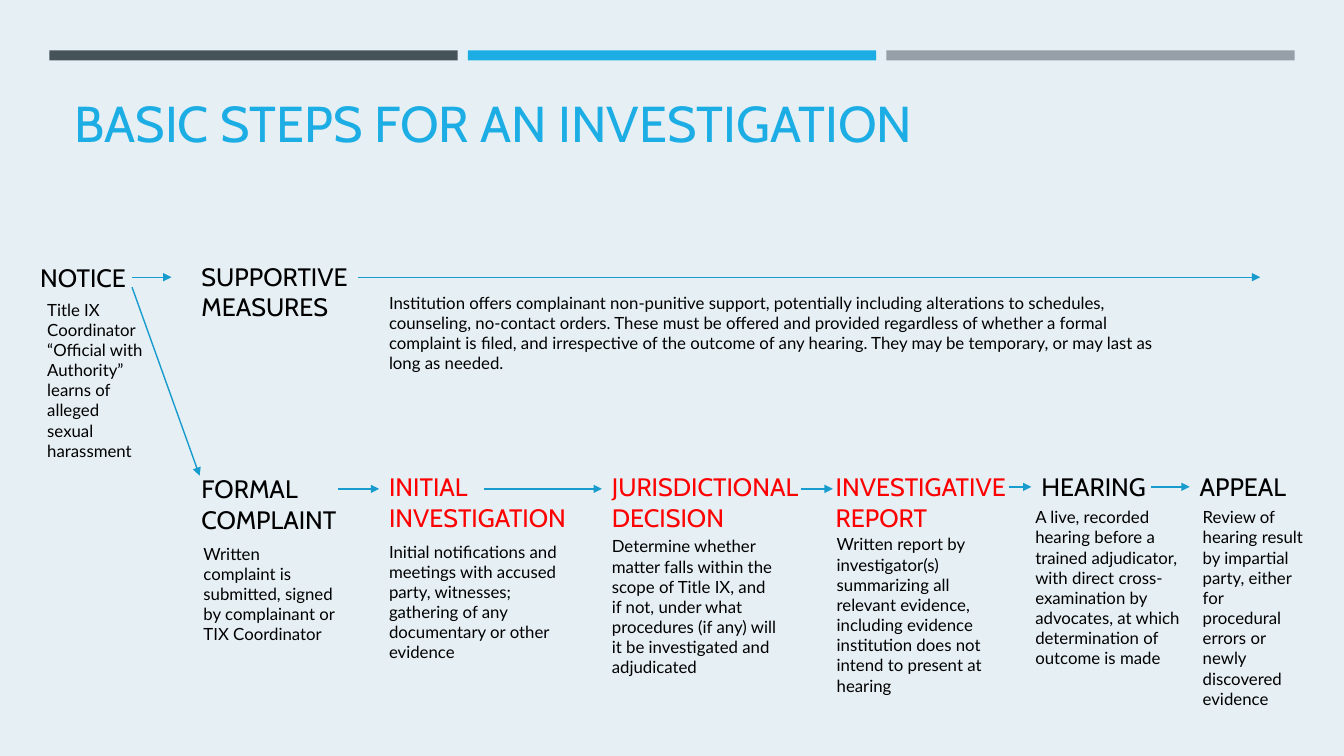
from typing import NamedTuple

from lxml.etree import SubElement
from pptx import Presentation
from pptx.dml.color import RGBColor
from pptx.enum.shapes import MSO_CONNECTOR, MSO_SHAPE
from pptx.enum.text import MSO_ANCHOR, MSO_AUTO_SIZE, PP_ALIGN
from pptx.oxml.ns import qn
from pptx.util import Inches, Pt

COLORS = {
    "background": "E6EFF4",
    "slate": "465359",
    "blue": "1CADE4",
    "gray": "969FA7",
    "arrow": "189CCE",
    "black": "000000",
    "red": "FF0000",
}


class Box(NamedTuple):
    x: float
    y: float
    w: float
    h: float


class Step(NamedTuple):
    heading: str
    heading_box: Box
    body: str
    body_box: Box
    color: str = "black"


class Arrow(NamedTuple):
    x1: float
    y1: float
    x2: float
    y2: float


TITLE_BOX = Box(0.64, 0.63, 11.68, 1.3)

STEPS = [
    Step("NOTICE", Box(0.3, 2.55, 1.4, 0.41),
         "Title IX Coordinator “Official with Authority” learns of alleged "
         "sexual harassment",
         Box(0.37, 2.92, 1.19, 1.72)),
    Step("SUPPORTIVE MEASURES", Box(1.9, 2.54, 1.72, 0.71),
         "Institution offers complainant non-punitive support, potentially "
         "including alterations to schedules, counseling, no-contact orders. "
         "These must be offered and provided regardless of whether a formal "
         "complaint is filed, and irrespective of the outcome of any hearing. "
         "They may be temporary, or may last as long as needed.",
         Box(3.76, 2.85, 7.99, 0.91)),
    Step("FORMAL COMPLAINT", Box(1.9, 4.65, 1.72, 0.71),
         "Written complaint is submitted, signed by complainant or TIX "
         "Coordinator",
         Box(1.92, 5.34, 1.5, 1.11)),
    Step("INITIAL INVESTIGATION", Box(3.76, 4.63, 2.08, 0.71),
         "Initial notifications and meetings with accused party, witnesses; "
         "gathering of any documentary or other evidence",
         Box(3.76, 5.32, 1.92, 1.31), "red"),
    Step("JURISDICTIONAL\nDECISION", Box(5.97, 4.63, 2.08, 0.71),
         "Determine whether matter falls within the scope of Title IX, and if "
         "not, under what procedures (if any) will it be investigated and "
         "adjudicated",
         Box(5.97, 5.27, 1.85, 1.51), "red"),
    Step("INVESTIGATIVE REPORT", Box(8.19, 4.63, 1.92, 0.71),
         "Written report by investigator(s) summarizing all relevant evidence, "
         "including evidence institution does not intend to present at hearing",
         Box(8.2, 5.25, 1.8, 1.72), "red"),
    Step("HEARING", Box(10.23, 4.63, 1.4, 0.4),
         "A live, recorded hearing before a trained adjudicator, with direct "
         "cross-examination by advocates, at which determination of outcome is "
         "made",
         Box(10.17, 4.98, 1.63, 1.72)),
    Step("APPEAL", Box(11.8, 4.63, 1.4, 0.4),
         "Review of hearing result by impartial party, either for procedural "
         "errors or newly discovered evidence",
         Box(11.83, 4.98, 1.21, 1.92)),
]

ARROWS = [
    Arrow(1.31, 2.75, 1.7, 2.75),
    Arrow(1.31, 2.85, 1.98, 4.72),
    Arrow(3.55, 2.75, 12.5, 2.75),
    Arrow(3.35, 4.85, 3.76, 4.85),
    Arrow(4.8, 4.85, 5.97, 4.85),
    Arrow(7.94, 4.85, 8.26, 4.85),
    Arrow(10.01, 4.83, 10.23, 4.83),
    Arrow(11.42, 4.83, 11.8, 4.83),
]


def rgb(name: str) -> RGBColor:
    return RGBColor.from_string(COLORS[name])


def add_text(slide, text: str, box: Box, *, font: str, size: float,
             color: str = "black", anchor=MSO_ANCHOR.TOP,
             auto_size=MSO_AUTO_SIZE.SHAPE_TO_FIT_TEXT,
             bottom: float = 0.05) -> None:
    sp = slide.shapes.add_textbox(*map(Inches, box))
    tf = sp.text_frame
    tf.word_wrap = True
    tf.auto_size = auto_size
    tf.vertical_anchor = anchor
    tf.margin_bottom = Inches(bottom)
    tf.text = text
    for p in tf.paragraphs:
        p.alignment = PP_ALIGN.LEFT
        for r in p.runs:
            r.font.name = font
            r.font.size = Pt(size)
            r.font.color.rgb = rgb(color)


def add_bar(slide, box: Box, color: str) -> None:
    sp = slide.shapes.add_shape(MSO_SHAPE.RECTANGLE, *map(Inches, box))
    sp.shadow.inherit = False
    sp.fill.solid()
    sp.fill.fore_color.rgb = rgb(color)
    sp.line.fill.background()


def add_arrow(slide, arrow: Arrow) -> None:
    cxn = slide.shapes.add_connector(MSO_CONNECTOR.STRAIGHT, *map(Inches, arrow))
    cxn.line.color.rgb = rgb("arrow")
    cxn.line.width = Pt(1)
    SubElement(cxn.line._get_or_add_ln(), qn("a:tailEnd"), type="triangle")
    SubElement(cxn._element.spPr, qn("a:effectLst"))


def main() -> None:
    prs = Presentation()
    prs.slide_width, prs.slide_height = Inches(13.33), Inches(7.5)
    slide = prs.slides.add_slide(prs.slide_layouts[6])
    slide.background.fill.solid()
    slide.background.fill.fore_color.rgb = rgb("background")

    for i, color in enumerate(("slate", "blue", "gray")):
        add_bar(slide, Box(0.49 + 4.15 * i, 0.5, 4.05, 0.1), color)

    add_text(slide, "BASIC STEPS FOR AN INVESTIGATION", TITLE_BOX,
             font="Cabin", size=36, color="blue", anchor=MSO_ANCHOR.BOTTOM,
             auto_size=MSO_AUTO_SIZE.NONE, bottom=0.42)

    for step in STEPS:
        add_text(slide, step.heading, step.heading_box,
                 font="Cabin", size=18, color=step.color)
        add_text(slide, step.body, step.body_box, font="Lato", size=12)

    for arrow in ARROWS:
        add_arrow(slide, arrow)

    prs.save("out.pptx")


if __name__ == "__main__":
    main()
